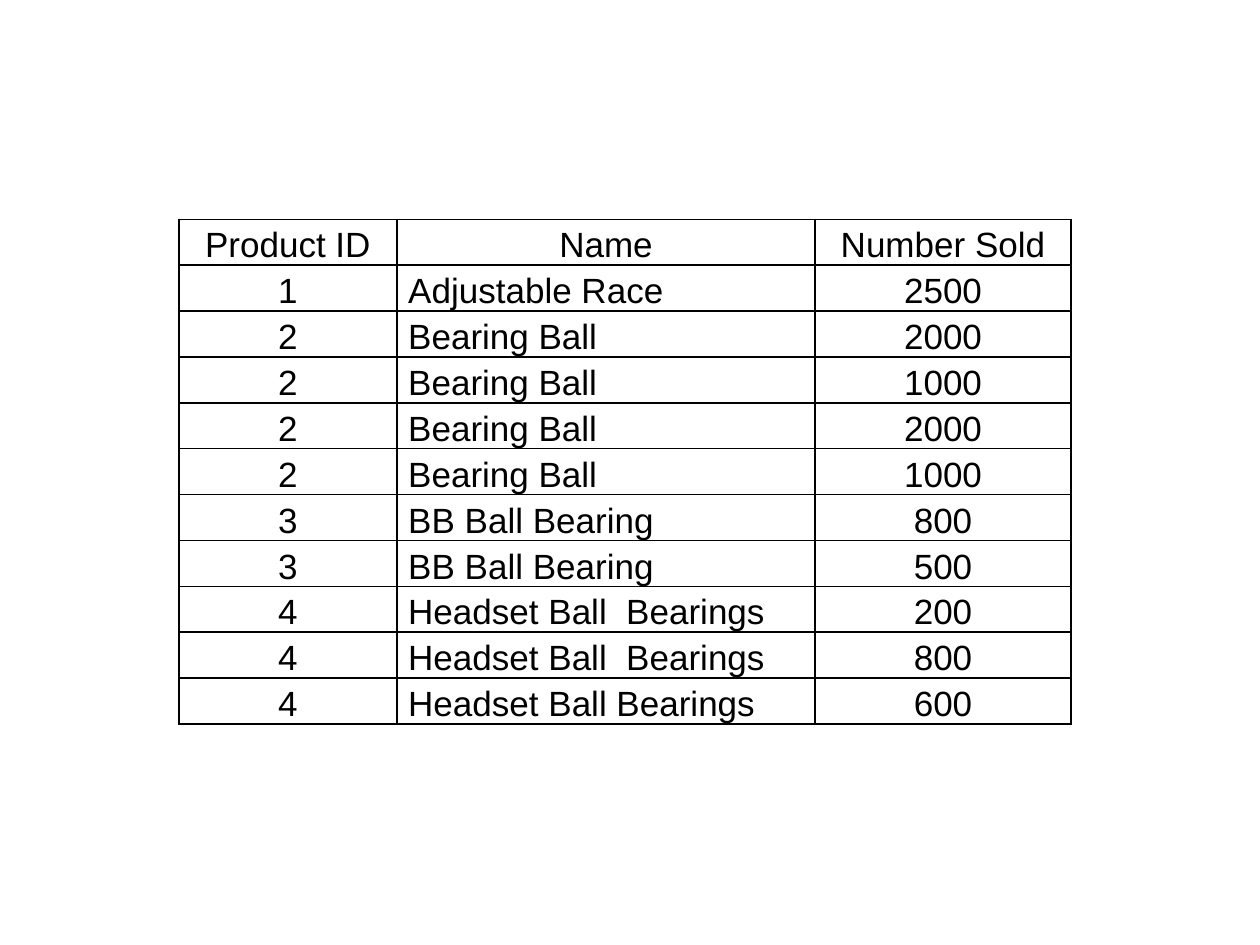
from lxml import etree
from pptx import Presentation
from pptx.dml.color import RGBColor
from pptx.enum.text import MSO_ANCHOR, PP_ALIGN
from pptx.oxml.ns import qn
from pptx.util import Inches, Pt

BLACK = RGBColor(0x00, 0x00, 0x00)
CENTER, LEFT = PP_ALIGN.CENTER, PP_ALIGN.LEFT
BOTTOM = MSO_ANCHOR.BOTTOM

# Content
HEADERS = ("Product ID", "Name", "Number Sold")
SALES = [
    (1, "Adjustable Race", 2500),
    (2, "Bearing Ball", 2000),
    (2, "Bearing Ball", 1000),
    (2, "Bearing Ball", 2000),
    (2, "Bearing Ball", 1000),
    (3, "BB Ball Bearing", 800),
    (3, "BB Ball Bearing", 500),
    (4, "Headset Ball  Bearings", 200),
    (4, "Headset Ball  Bearings", 800),
    (4, "Headset Ball Bearings", 600),
]

# Layout and format
TABLE_LEFT, TABLE_TOP, TABLE_HEIGHT = 1.42, 1.74, 4.01
COLUMN_WIDTHS = (1.73, 3.32, 2.03)
NAME_COLUMN = 1
NAME_INDENT = 0.09
CELL_FORMAT = {
    "margin_left": Inches(0.01),
    "margin_right": Inches(0.01),
    "margin_top": Inches(0.01),
    "margin_bottom": 0,
    "vertical_anchor": BOTTOM,
}
FONT_FORMAT = {"name": "Arial", "size": Pt(20), "bold": False}


def apply_format(target, values):
    for name, value in values.items():
        setattr(target, name, value)


def add_borders(cell):
    properties = cell._tc.get_or_add_tcPr()
    for side in ("a:lnL", "a:lnR", "a:lnT", "a:lnB"):
        line = etree.SubElement(properties, qn(side), w=str(Pt(1)))
        fill = etree.SubElement(line, qn("a:solidFill"))
        etree.SubElement(fill, qn("a:srgbClr"), val=str(BLACK))


def fill_cell(cell, text, is_name):
    apply_format(cell, CELL_FORMAT)
    if is_name:
        cell.margin_left = Inches(NAME_INDENT)
    add_borders(cell)
    cell.fill.background()
    cell.text = str(text)
    paragraph = cell.text_frame.paragraphs[0]
    paragraph.alignment = LEFT if is_name else CENTER
    font = paragraph.runs[0].font
    apply_format(font, FONT_FORMAT)
    font.color.rgb = BLACK


def main():
    presentation = Presentation()
    presentation.slide_width, presentation.slide_height = Inches(10), Inches(7.5)
    slide = presentation.slides.add_slide(presentation.slide_layouts[6])

    # Sales table
    rows = [HEADERS, *SALES]
    table = slide.shapes.add_table(
        len(rows), len(HEADERS), Inches(TABLE_LEFT), Inches(TABLE_TOP),
        Inches(sum(COLUMN_WIDTHS)), Inches(TABLE_HEIGHT)).table
    apply_format(table, {"first_row": False, "horz_banding": False})
    for column, width in zip(table.columns, COLUMN_WIDTHS):
        column.width = Inches(width)

    # Cells: names are left-aligned, everything else is centred
    for row_index, row in enumerate(rows):
        for column_index, text in enumerate(row):
            is_name = row_index > 0 and column_index == NAME_COLUMN
            fill_cell(table.cell(row_index, column_index), text, is_name)

    presentation.save("out.pptx")


if __name__ == "__main__":
    main()
